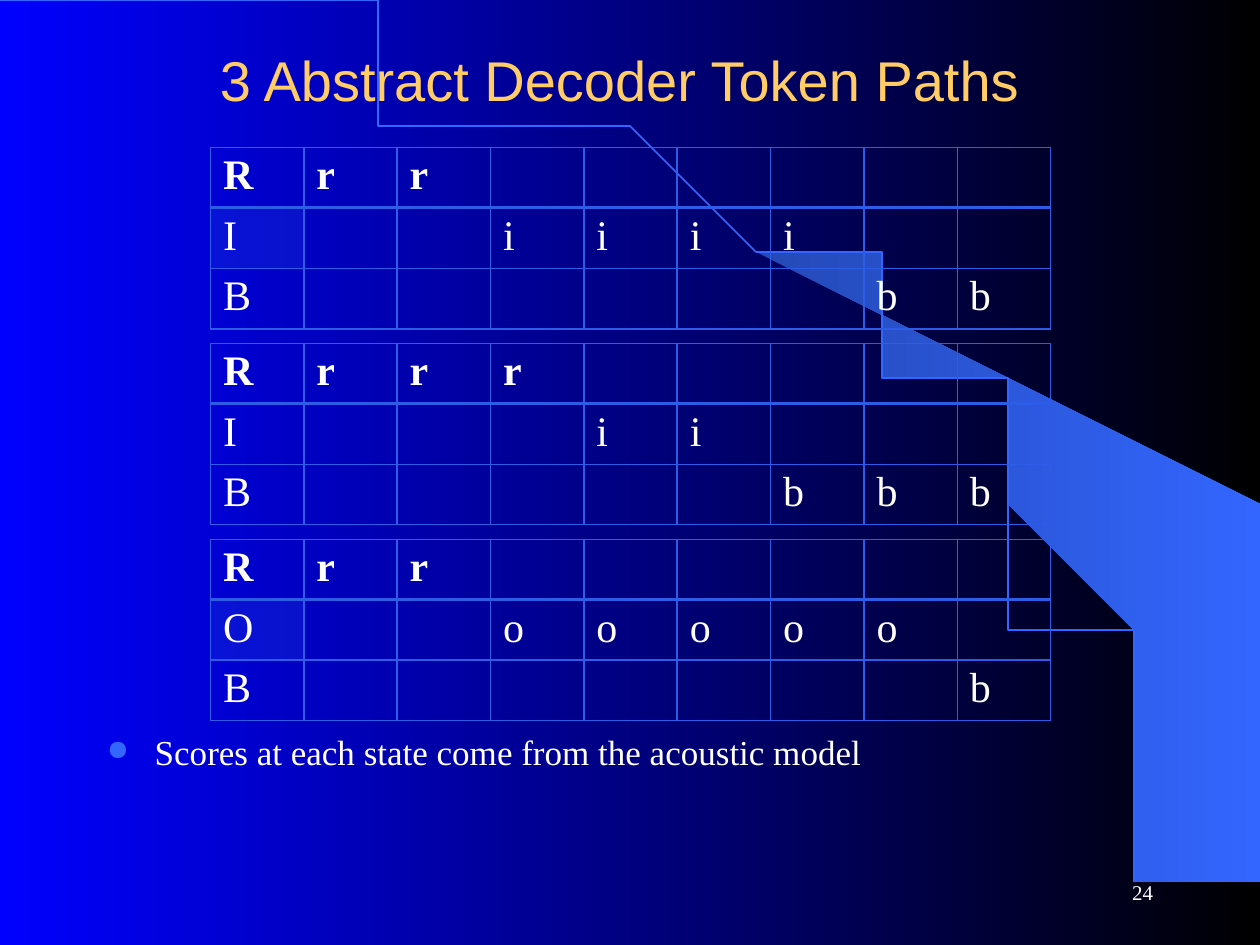
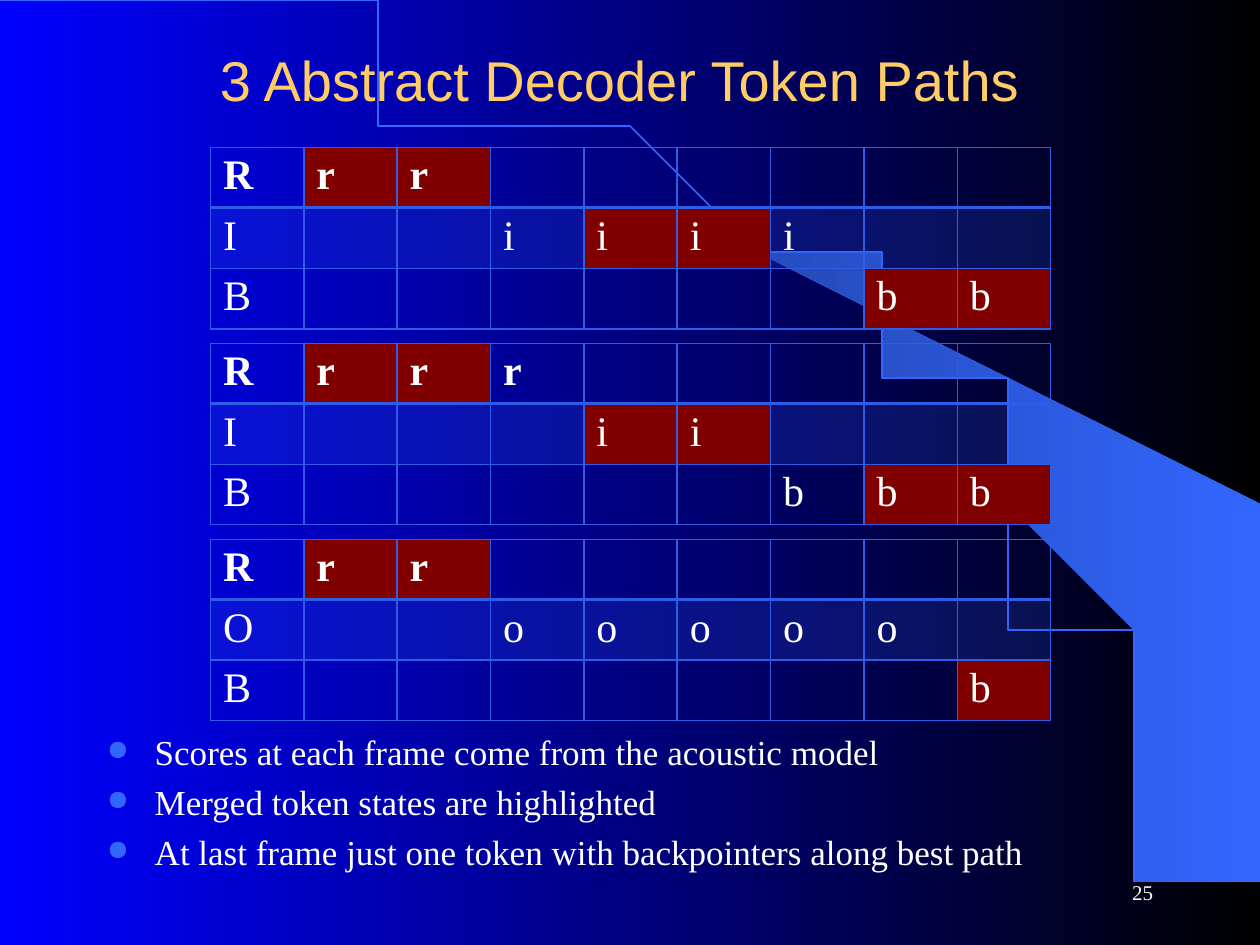
from collections import Counter
from math import cos, pi, sin

from lxml.etree import SubElement
from pptx import Presentation
from pptx.dml.color import RGBColor
from pptx.enum.text import MSO_ANCHOR as Anchor, PP_ALIGN as Align
from pptx.oxml.ns import qn
from pptx.util import Inches, Pt

BLUE, EDGE, DEEP = "3366FF", "2D5CE7", "2449B6"
GOLD, WHITE, RED = "FFCC66", "FFFFFF", "800000"
SANS, SERIF = "Arial", "Times New Roman"
TITLE = "3 Abstract Decoder Token Paths"

# One letter per frame: the state that holds the token.
PATHS = ["rriiiibb", "rrriibbb", "rrooooob"]
FRAMES = len(PATHS[0])
LEFT, TOP, STEP = 1.67, 1.17, 1.555
WIDTH, ROW = 6.67, 0.41

WING = [(9.2, 7.48), (9.99, 7.49), (9.99, 4.23), (5.89, 1.73), (6.24, 1.99),
        (6.53, 2.22), (6.85, 2.5), (7.16, 2.8), (7.62, 3.3), (8.03, 3.84),
        (8.32, 4.31), (8.58, 4.79), (8.78, 5.28), (8.93, 5.72), (9.03, 6.09),
        (9.13, 6.56), (9.17, 6.96)]


def color(code):
    return RGBColor.from_string(code)


def blend(fill, start, end):
    """Fill with a gradient from left to right."""
    fill.gradient()
    fill.gradient_angle = 0
    for stop, code in zip(fill.gradient_stops, (start, end)):
        stop.color.rgb = color(code)


def outline(slide, points, close):
    pen = slide.shapes.build_freeform(*points[0], scale=Inches(1))
    pen.add_line_segments(points[1:], close=close)
    shape = pen.convert_to_shape()
    shape.shadow.inherit = False
    return shape


def backdrop(slide):
    blend(slide.background.fill, "0000FF", "000000")
    wing = outline(slide, WING, True)
    blend(wing.fill, DEEP, BLUE)
    wing.line.fill.background()

    turns = [i * pi / 180 for i in range(91)]
    arc = outline(slide, [(9.2 * sin(t), 7.49 * (1 - cos(t))) for t in turns],
                  False)
    arc.fill.background()
    arc.line.color.rgb = color(BLUE)
    arc.line.width = Pt(1)


def style(para, size, face=SERIF, code=WHITE, bold=False):
    font = para.font
    font.size, font.name, font.bold = Pt(size), face, bold
    font.color.rgb = color(code)


def text_box(slide, place, anchor=Anchor.MIDDLE):
    box = slide.shapes.add_textbox(*map(Inches, place))
    frame = box.text_frame
    frame.word_wrap = True
    frame.vertical_anchor = anchor
    return frame


def label(slide, place, text, align, size, face=SERIF, code=WHITE):
    para = text_box(slide, place).paragraphs[0]
    para.text, para.alignment = text, align
    style(para, size, face, code)


def bullet(para):
    props = para._p.get_or_add_pPr()
    props.set("marL", str(Inches(0.38)))
    props.set("indent", str(-Inches(0.38)))
    tint = SubElement(props, qn("a:buClr"))
    SubElement(tint, qn("a:srgbClr"), val=BLUE)
    SubElement(props, qn("a:buSzPct"), val="80000")
    SubElement(props, qn("a:buChar"), char="●")


def notes(slide, lines):
    frame = text_box(slide, (0.75, 5.75, 8.5, 0.83), Anchor.TOP)
    for i, line in enumerate(lines):
        para = frame.add_paragraph() if i else frame.paragraphs[0]
        para.text = line
        bullet(para)
        para.space_before = Pt(4.6)
        style(para, 20)


def border(cell, row):
    props = cell._tc.get_or_add_tcPr()
    heavy = {0: "lnB", 1: "lnT"}.get(row)
    for i, side in enumerate(("lnL", "lnR", "lnT", "lnB")):
        width = Pt(2 if side == heavy else 1)
        line = SubElement(props, qn("a:" + side), w=str(width))
        paint = SubElement(line, qn("a:solidFill"))
        SubElement(paint, qn("a:srgbClr"), val=EDGE)
        props.insert(i, line)


def paint(cell, code, alpha=None):
    cell.fill.solid()
    cell.fill.fore_color.rgb = color(code)
    if alpha:
        tone = cell._tc.tcPr.find(".//" + qn("a:srgbClr"))
        SubElement(tone, qn("a:alpha"), val=str(alpha * 1000))


def token_table(slide, top, path, tinted, merged):
    """Draw one path; tint the first cells of its middle row."""
    states = list(dict.fromkeys(path))
    size = len(states), FRAMES + 1
    grid = slide.shapes.add_table(*size, Inches(LEFT), Inches(top),
                                  Inches(WIDTH), Inches(ROW * len(states))).table
    grid.first_row = grid.horz_banding = False
    for row, state in enumerate(states):
        marks = [state.upper()] + [s if s == state else "" for s in path]
        for col, mark in enumerate(marks):
            cell = grid.cell(row, col)
            cell.margin_top = cell.margin_bottom = Inches(0.04)
            cell.text = mark
            style(cell.text_frame.paragraphs[0], 24, bold=row == 0)
            if (col, mark) in merged:
                paint(cell, RED)
            elif row == 1 and col < tinted:
                paint(cell, EDGE, 20)
            else:
                cell.fill.background()
            border(cell, row)


def shared_states():
    """Find the (frame, state) pairs that two or more paths have."""
    count = Counter(pair for path in PATHS for pair in enumerate(path, 1))
    return {pair for pair, times in count.items() if times > 1}


def path_slide(deck, number, lines, tints, merged=()):
    slide = deck.slides.add_slide(deck.slide_layouts[6])
    backdrop(slide)
    label(slide, (0.67, 0.17, 8.5, 0.92), TITLE, Align.CENTER, 32, SANS, GOLD)
    notes(slide, lines)
    label(slide, (7.17, 6.83, 2.08, 0.5), str(number), Align.RIGHT, 12)
    for i, (path, tinted) in enumerate(zip(PATHS, tints)):
        token_table(slide, TOP + i * STEP, path, tinted, merged)


def main():
    deck = Presentation()
    deck.slide_width, deck.slide_height = Inches(10), Inches(7.5)
    path_slide(deck, 24, ["Scores at each state come from the acoustic model"],
               (1, 0, 1))
    path_slide(deck, 25, [
        "Scores at each frame come from the acoustic model",
        "Merged token states are highlighted",
        "At last frame just one token with backpointers along best path",
    ], [FRAMES + 1] * len(PATHS), shared_states())
    deck.save("out.pptx")


if __name__ == "__main__":
    main()
